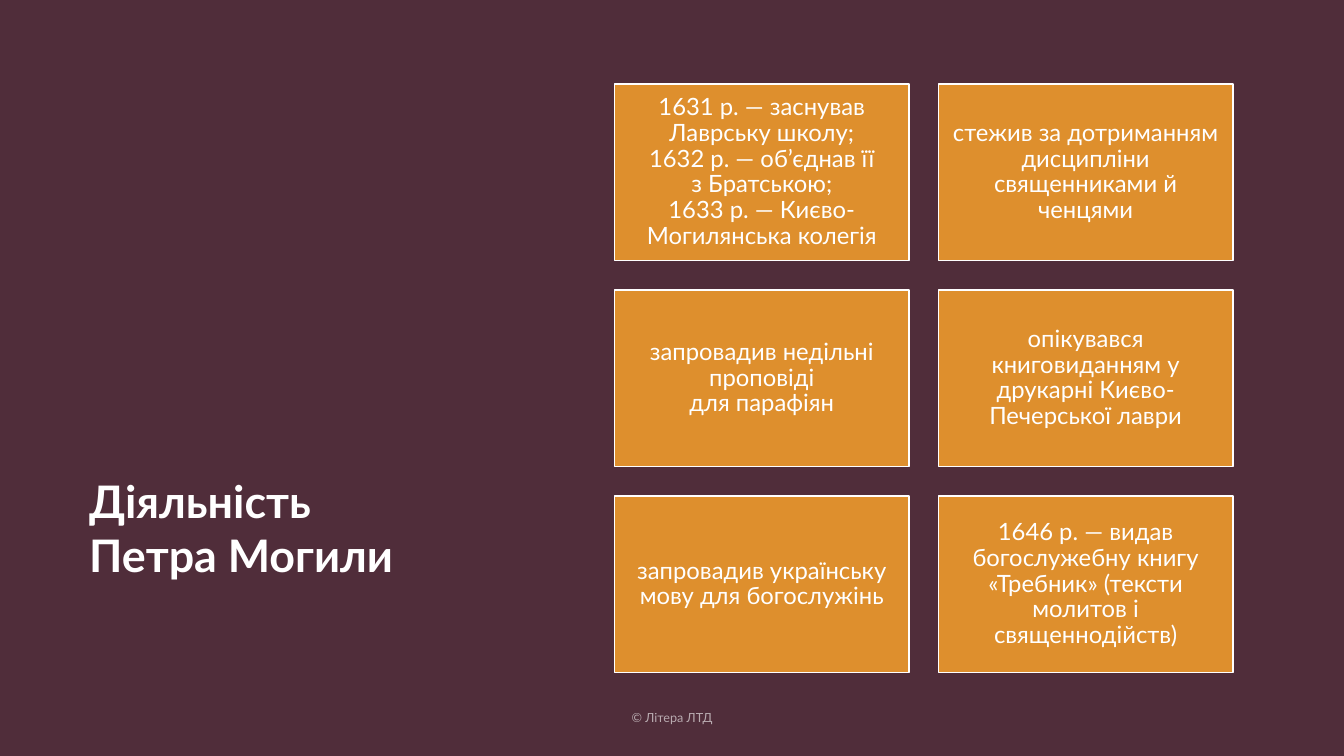
from lxml import etree
from pptx import Presentation
from pptx.dml.color import RGBColor
from pptx.enum import shapes, text
from pptx.oxml.ns import qn
from pptx.util import Cm, Pt

COLORS = {"background": "502D3A", "card": "DE8F2D", "text": "FFFFFF"}
FONT = "Lato"

COLUMNS = 2
CARD_LEFT, CARD_TOP = 15.49, 2.12
CARD_WIDTH, CARD_HEIGHT = 7.42, 4.45
GAP_X, GAP_Y = 0.74, 0.74
CARD_INSET = 0.17

CARDS = [
    "1631 р. — заснував Лаврську школу;\n1632 р. — об’єднав її\n"
    "з Братською;\n1633 р. — Києво-Могилянська колегія",
    "стежив за дотриманням дисципліни священниками й ченцями",
    "запровадив недільні проповіді\nдля парафіян",
    "опікувався книговиданням у друкарні Києво-Печерської лаври",
    "запровадив українську мову для богослужінь",
    "1646 р. — видав богослужебну книгу «Требник» (тексти молитов і священнодійств)",
]


def rgb(name):
    return RGBColor.from_string(COLORS[name])


def set_text(sp, content, size, anchor, align, bold=False, spacing=None):
    tf = sp.text_frame
    tf.text = content
    tf.word_wrap = True
    tf.vertical_anchor = anchor
    for p in tf.paragraphs:
        p.alignment = align
        p.line_spacing = spacing
        for r in p.runs:
            r.font.name = FONT
            r.font.size = Pt(size)
            r.font.bold = bold
            r.font.color.rgb = rgb("text")
    return tf


def add_title(s, content):
    sp = s.shapes.add_textbox(Cm(2), Cm(8.43), Cm(8.47), Cm(6.35))
    set_text(sp, content, 32, text.MSO_ANCHOR.BOTTOM, text.PP_ALIGN.LEFT, bold=True)


def add_card(s, index, content):
    row, column = divmod(index, COLUMNS)
    sp = s.shapes.add_shape(
        shapes.MSO_SHAPE.RECTANGLE,
        Cm(CARD_LEFT + column * (CARD_WIDTH + GAP_X)),
        Cm(CARD_TOP + row * (CARD_HEIGHT + GAP_Y)),
        Cm(CARD_WIDTH), Cm(CARD_HEIGHT))
    sp.shadow.inherit = False
    sp.fill.solid()
    sp.fill.fore_color.rgb = rgb("card")
    sp.line.color.rgb = rgb("text")
    sp.line.width = Pt(1)
    tf = set_text(sp, content, 17, text.MSO_ANCHOR.MIDDLE, text.PP_ALIGN.CENTER, spacing=0.9)
    tf.margin_left = tf.margin_right = Cm(CARD_INSET)
    tf.margin_top = tf.margin_bottom = Cm(CARD_INSET)


def add_footer(s, content):
    """Add the copyright line in 60 % opaque text."""
    sp = s.shapes.add_textbox(Cm(11.22), Cm(17.58), Cm(11.43), Cm(1.01))
    tf = set_text(sp, content, 9, text.MSO_ANCHOR.MIDDLE, text.PP_ALIGN.CENTER)
    for color in tf.paragraphs[0].runs[0].font._element.iter(qn("a:srgbClr")):
        etree.SubElement(color, qn("a:alpha"), val="60000")


def main():
    prs = Presentation()
    prs.slide_width, prs.slide_height = Cm(33.87), Cm(19.05)
    s = prs.slides.add_slide(prs.slide_layouts[6])
    s.background.fill.solid()
    s.background.fill.fore_color.rgb = rgb("background")

    add_title(s, "Діяльність Петра Могили")
    for index, content in enumerate(CARDS):
        add_card(s, index, content)
    add_footer(s, "© Літера ЛТД")
    prs.save("out.pptx")


if __name__ == "__main__":
    main()
